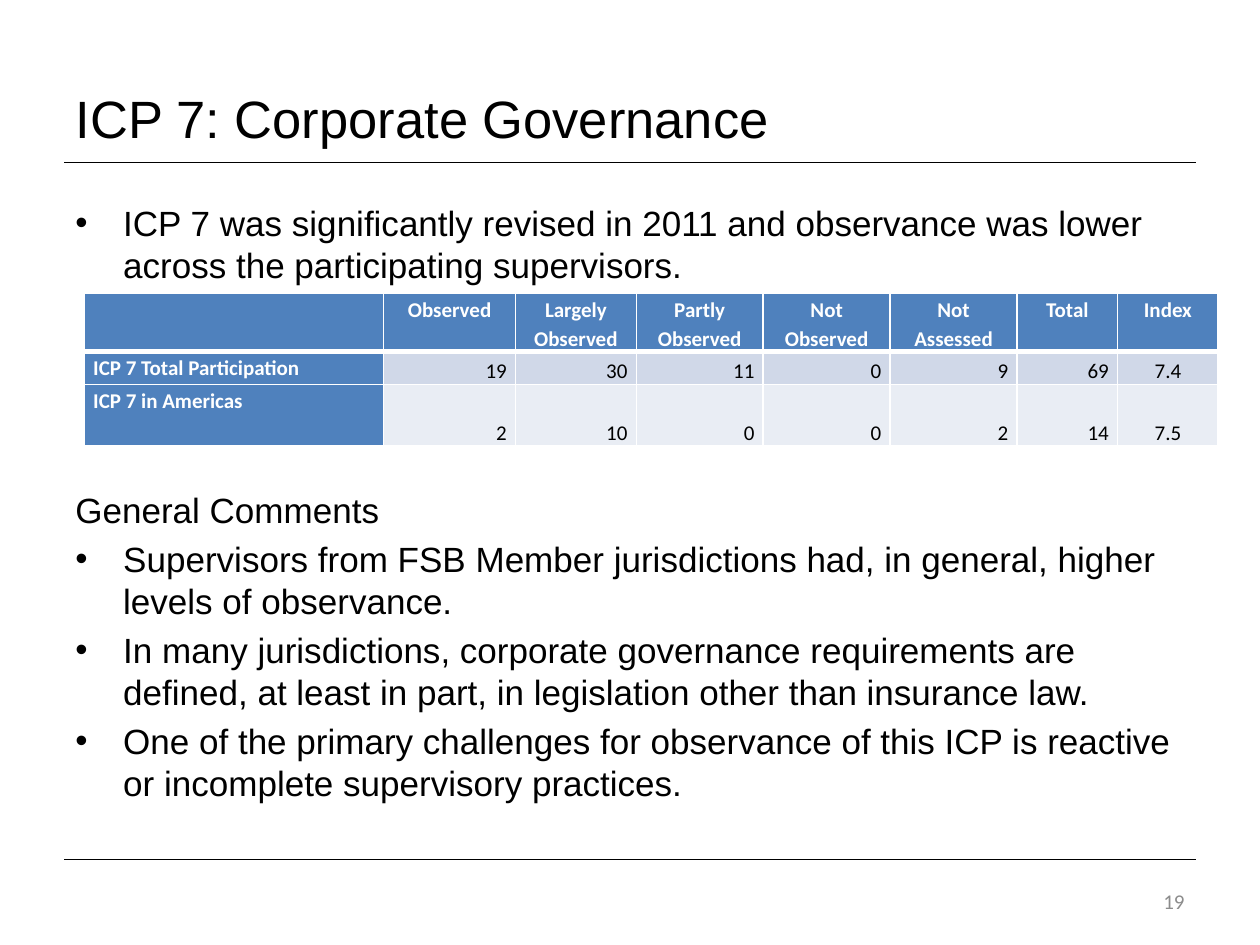
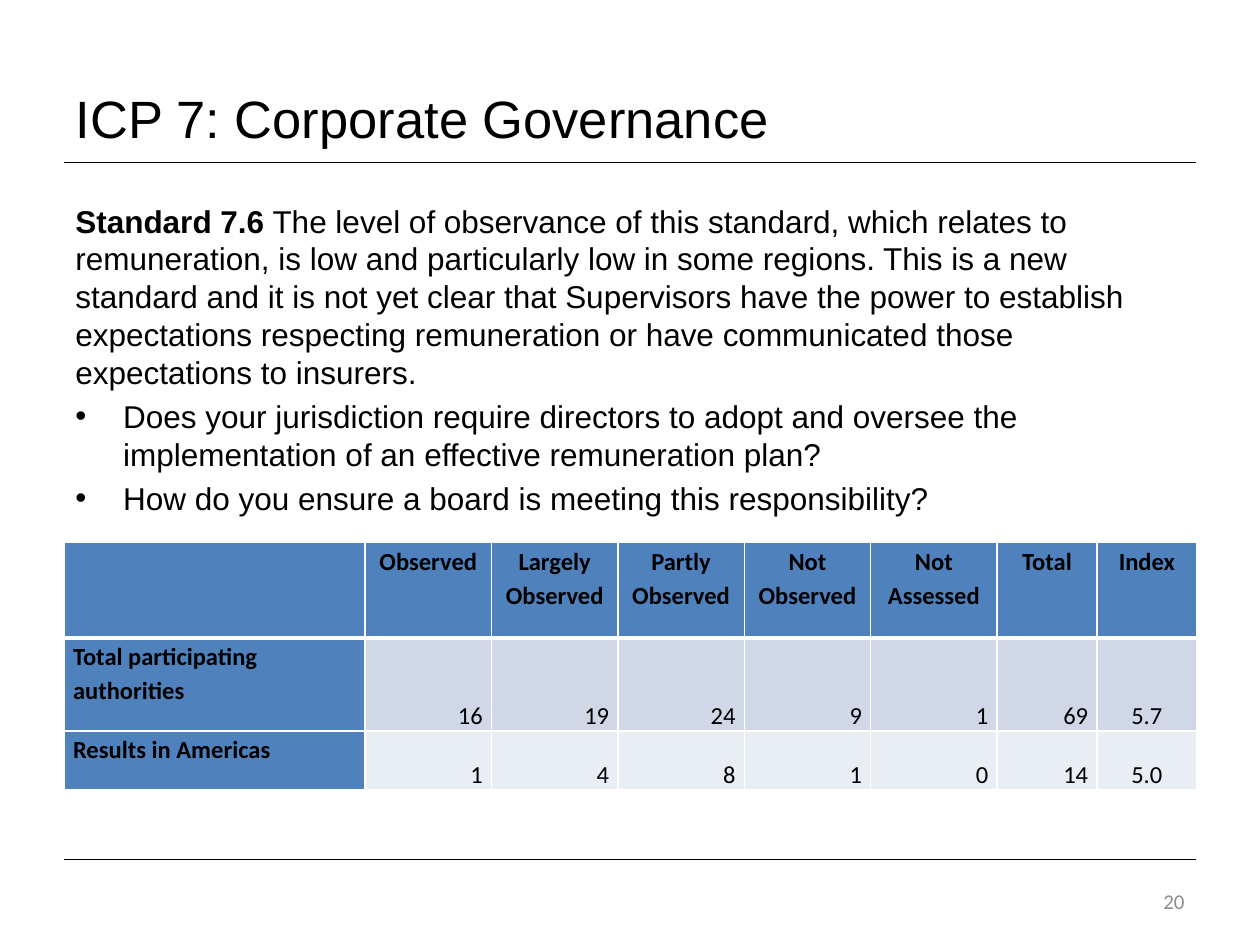
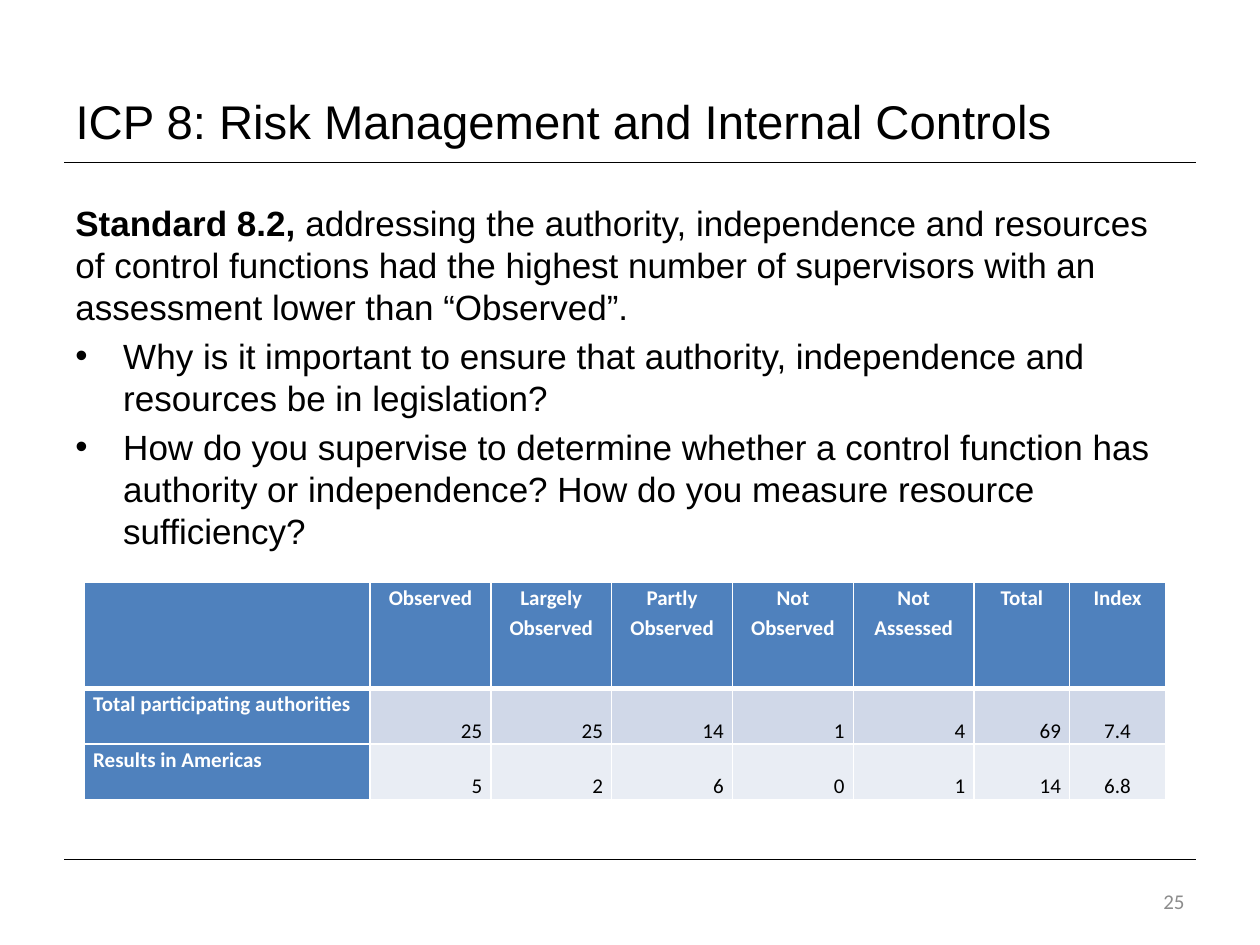
from lxml.etree import SubElement
from pptx import Presentation
from pptx.dml.color import RGBColor
from pptx.enum.shapes import MSO_CONNECTOR
from pptx.enum.text import MSO_ANCHOR, MSO_AUTO_SIZE, PP_ALIGN
from pptx.oxml.ns import qn
from pptx.util import Inches, Pt

COLORS = {"ink": "000000", "paper": "FFFFFF", "number": "8C8C8C",
          "head": "4F81BD", "odd": "D0D8E8", "even": "E9EDF4"}
WIDTH, HEIGHT = Inches(10), Inches(7.5)
TITLE_BOX = (5, 4, 90, 12.4)
BODY_BOX = (5, 20.67, 90, 68.67)
NUMBER_BOX = (71.7, 92.67, 23.3, 5.33)
RULE_SPAN = (5.1, 94.9)
RULE_ROWS = (17.2, 90.93)
INDENT = Inches(0.38)
HEADINGS = ["", "Observed", "Largely Observed", "Partly Observed",
            "Not Observed", "Not Assessed", "Total", "Index"]

SLIDES = [
    dict(
        title="ICP 7: Corporate Governance", title_size=30, number="19", size=20,
        body=[
            ("•", "", "ICP 7 was significantly revised in 2011 and observance was lower "
             "across the participating supervisors.", 0),
            ("", "", "General Comments", 116),
            ("•", "", "Supervisors from FSB Member jurisdictions had, in general, "
             "higher levels of observance.", 4),
            ("•", "", "In many jurisdictions, corporate governance requirements are "
             "defined, at least in part, in legislation other than insurance law.", 4),
            ("•", "", "One of the primary challenges for observance of this ICP is "
             "reactive or incomplete supervisory practices.", 4),
        ],
        table=dict(
            box=(6.7, 31.07, 90, 15.73), size=12, label_color="paper",
            cols=[2.38, 1.05, 0.96, 1.01, 1.01, 1.01, 0.8, 0.8],
            rows=[0.43, 0.26, 0.49],
            data=[["ICP 7 Total Participation", 19, 30, 11, 0, 9, 69, 7.4],
                  ["ICP 7 in Americas", 2, 10, 0, 0, 2, 14, 7.5]]),
    ),
    dict(
        title="ICP 7: Corporate Governance", title_size=30, number="20", size=18,
        body=[
            ("", "Standard 7.6", " The level of observance of this standard, which "
             "relates to remuneration, is low and particularly low in some regions. "
             "This is a new standard and it is not yet clear that Supervisors have the "
             "power to establish expectations respecting remuneration or have "
             "communicated those expectations to insurers.", 0),
            ("•", "", "Does your jurisdiction require directors to adopt and oversee "
             "the implementation of an effective remuneration plan?", 3.6),
            ("•", "", "How do you ensure a board is meeting this responsibility?", 3.6),
        ],
        table=dict(
            box=(5.1, 57.4, 89.9, 26.2), size=14, label_color="ink",
            cols=[2.38, 1, 1, 1, 1, 1, 0.79, 0.79],
            rows=[0.76, 0.74, 0.47],
            data=[["Total participating authorities", 16, 19, 24, 9, 1, 69, 5.7],
                  ["Results in Americas", 1, 4, 8, 1, 0, 14, 5.0]]),
    ),
    dict(
        title="ICP 8: Risk Management and Internal Controls", title_size=27,
        number="25", size=20,
        body=[
            ("", "Standard 8.2, ", "addressing the authority, independence and resources "
             "of control functions had the highest number of supervisors with an "
             "assessment lower than “Observed”.", 0),
            ("•", "", "Why is it important to ensure that authority, independence and "
             "resources be in legislation?", 4),
            ("•", "", "How do you supervise to determine whether a control function has "
             "authority or independence? How do you measure resource sufficiency?", 4),
        ],
        table=dict(
            box=(6.7, 61.6, 85.8, 23), size=12, label_color="paper",
            cols=[2.27, 0.96, 0.96, 0.96, 0.96, 0.96, 0.76, 0.76],
            rows=[0.84, 0.44, 0.44],
            data=[["Total participating authorities", 25, 25, 14, 1, 4, 69, 7.4],
                  ["Results in Americas", 5, 2, 6, 0, 1, 14, 6.8]]),
    ),
]


def across(share):
    return round(WIDTH * share / 100)


def down(share):
    return round(HEIGHT * share / 100)


def place(box):
    x, y, w, h = box
    return across(x), down(y), across(w), down(h)


def apply(obj, **values):
    for name, value in values.items():
        setattr(obj, name, value)


def add_run(p, text, size, font="Arial", color="ink", bold=False):
    r = p.add_run()
    r.text = text
    apply(r.font, name=font, size=Pt(size), bold=bold)
    r.font.color.rgb = RGBColor.from_string(COLORS[color])


def add_bullet(p, char):
    pPr = p._p.get_or_add_pPr()
    pPr.set("marL", str(INDENT))
    pPr.set("indent", str(-INDENT))
    SubElement(pPr, qn("a:buFont"), typeface="Arial")
    SubElement(pPr, qn("a:buChar"), char=char)


def add_title(s, box, text, size):
    sp = s.shapes.title
    apply(sp, **dict(zip(("left", "top", "width", "height"), place(box))))
    tf = sp.text_frame
    apply(tf, word_wrap=True, auto_size=MSO_AUTO_SIZE.NONE,
          vertical_anchor=MSO_ANCHOR.BOTTOM)
    p = tf.paragraphs[0]
    p.alignment = PP_ALIGN.LEFT
    add_run(p, text, size)


def add_rules(s, span, rows):
    x1, x2 = map(across, span)
    for y in map(down, rows):
        line = s.shapes.add_connector(MSO_CONNECTOR.STRAIGHT, x1, y, x2, y)
        line.line.width = Pt(0.75)
        line.line.color.rgb = RGBColor.from_string(COLORS["ink"])
        SubElement(line._element.spPr, qn("a:effectLst"))


def add_body(s, box, paragraphs, size):
    tf = s.shapes.add_textbox(*place(box)).text_frame
    tf.word_wrap = True
    for i, (bullet, lead, text, gap) in enumerate(paragraphs):
        p = tf.add_paragraph() if i else tf.paragraphs[0]
        if bullet:
            add_bullet(p, bullet)
        apply(p, line_spacing=Pt(size * 1.2), space_before=Pt(gap))
        if lead:
            add_run(p, lead, size, bold=True)
        add_run(p, text, size)


def add_number(s, box, number):
    tf = s.shapes.add_textbox(*place(box)).text_frame
    apply(tf, word_wrap=True, vertical_anchor=MSO_ANCHOR.MIDDLE)
    p = tf.paragraphs[0]
    p.alignment = PP_ALIGN.RIGHT
    add_run(p, number, 12, "Calibri", "number")


def add_borders(cell, bottom):
    tcPr = cell._tc.get_or_add_tcPr()
    for side, width in (("L", 1), ("R", 1), ("T", 1), ("B", bottom)):
        ln = SubElement(tcPr, qn(f"a:ln{side}"), w=str(Pt(width)))
        fill = SubElement(ln, qn("a:solidFill"))
        SubElement(fill, qn("a:srgbClr"), val=COLORS["paper"])


def format_cell(cell, text, row, col, last_col, size, label_color):
    is_label = row == 0 or col == 0
    apply(cell, margin_left=Inches(0.07), margin_right=Inches(0.07),
          margin_top=0, margin_bottom=0,
          vertical_anchor=MSO_ANCHOR.TOP if is_label else MSO_ANCHOR.BOTTOM)
    add_borders(cell, 1 if row else 3)
    cell.fill.solid()
    band = "head" if is_label else "odd" if row % 2 else "even"
    cell.fill.fore_color.rgb = RGBColor.from_string(COLORS[band])
    if text == "":
        return
    p = cell.text_frame.paragraphs[0]
    p.line_spacing = 1.15
    if row == 0 or col == last_col:
        p.alignment = PP_ALIGN.CENTER
    else:
        p.alignment = PP_ALIGN.RIGHT if col else PP_ALIGN.LEFT
    if not is_label:
        p.space_after = Pt(10)
    add_run(p, str(text), size, "Calibri", label_color if is_label else "ink", is_label)


def add_results(s, box, cols, rows, data, size, label_color):
    x, y, w, h = place(box)
    table = s.shapes.add_table(len(rows), len(cols), x, y, w, h).table
    for column, share in zip(table.columns, cols):
        column.width = round(w * share / sum(cols))
    for line, share in zip(table.rows, rows):
        line.height = round(h * share / sum(rows))
    for row, values in enumerate([HEADINGS, *data]):
        for col, text in enumerate(values):
            format_cell(table.cell(row, col), text, row, col, len(cols) - 1,
                        size, label_color)


def add_slide(prs, content):
    s = prs.slides.add_slide(prs.slide_layouts[5])
    add_rules(s, RULE_SPAN, RULE_ROWS)
    add_body(s, BODY_BOX, content["body"], content["size"])
    add_number(s, NUMBER_BOX, content["number"])
    add_title(s, TITLE_BOX, content["title"], content["title_size"])
    add_results(s, **content["table"])


def main():
    prs = Presentation()
    apply(prs, slide_width=WIDTH, slide_height=HEIGHT)
    for content in SLIDES:
        add_slide(prs, content)
    prs.save("out.pptx")


if __name__ == "__main__":
    main()
